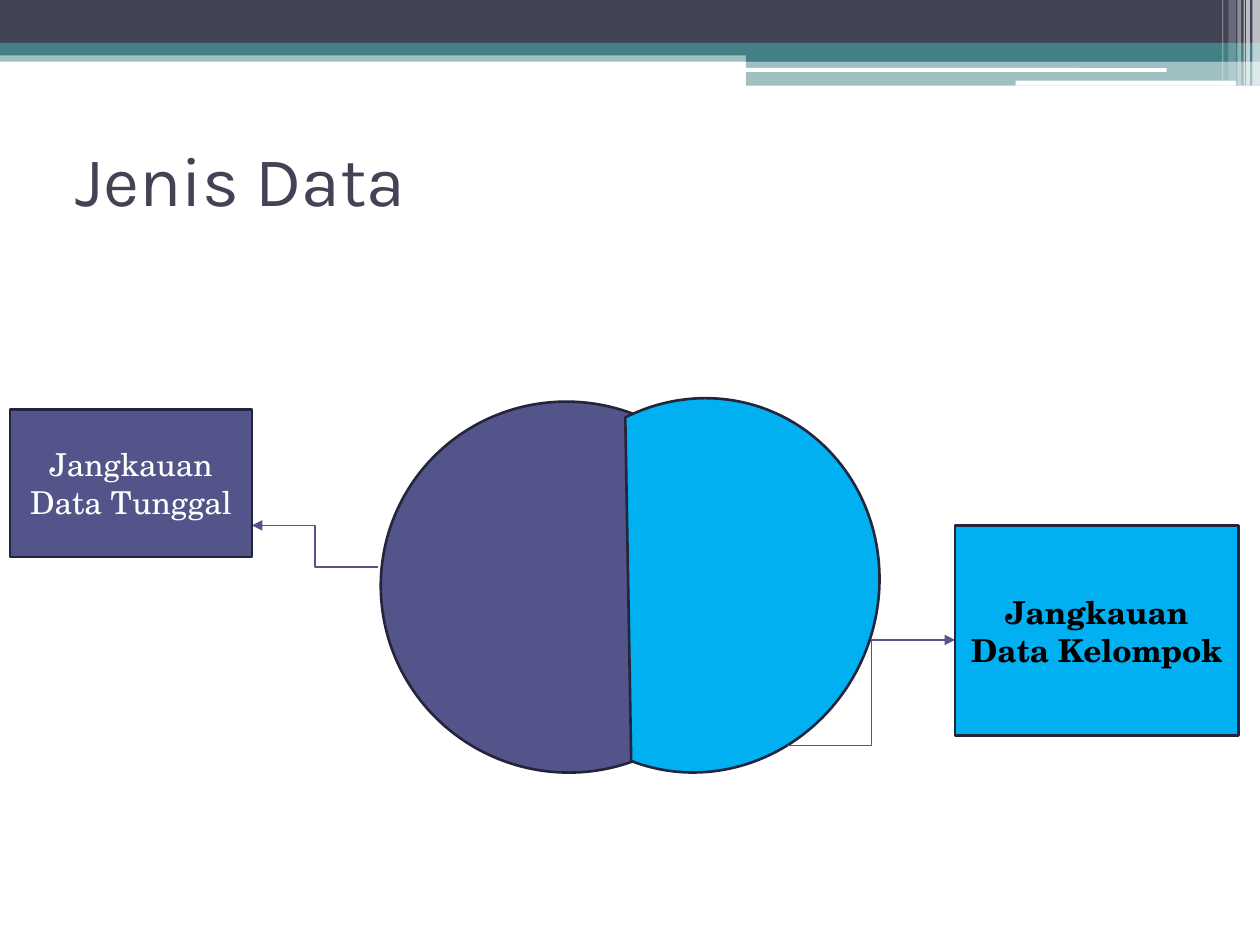
from lxml import etree
from pptx import Presentation
from pptx.dml.color import RGBColor
from pptx.enum.shapes import MSO_CONNECTOR, MSO_SHAPE
from pptx.enum.text import MSO_ANCHOR, PP_ALIGN
from pptx.oxml.ns import qn
from pptx.util import Inches, Pt

RECT, ROUND, CHORD = MSO_SHAPE.RECTANGLE, MSO_SHAPE.ROUNDED_RECTANGLE, MSO_SHAPE.CHORD
ELBOW = MSO_CONNECTOR.ELBOW
MIDDLE = MSO_ANCHOR.MIDDLE
LEFT, CENTER = PP_ALIGN.LEFT, PP_ALIGN.CENTER
HEAD, BODY = "Karla", "TeX Gyre Schola"
COLORS = {
    "slate": "424456",
    "teal": "438086",
    "violet": "53548A",
    "sky": "00B0F0",
    "edge": "24253C",
    "white": "FFFFFF",
    "black": "000000",
}


def tint(name):
    """Return the named colour."""
    return RGBColor.from_string(COLORS[name])


def add_shape(slide, kind, box, fill, alpha=100, edge=None, turn=0):
    """Add a filled preset shape, with an outline if edge is given."""
    shape = slide.shapes.add_shape(kind, *map(Inches, box))
    shape.shadow.inherit = False
    shape.rotation = turn
    shape.fill.solid()
    shape.fill.fore_color.rgb = tint(fill)
    if alpha < 100:
        color = shape.fill._xPr.find(qn("a:solidFill"))[0]
        etree.SubElement(color, qn("a:alpha"), val=str(alpha * 1000))
    if edge:
        shape.line.color.rgb = tint(edge)
        shape.line.width = Pt(1.5)
    else:
        shape.line.fill.background()
    return shape


def add_text(shape, text, font=BODY, size=18, color="white", bold=False, align=CENTER):
    """Write one formatted paragraph into a shape."""
    frame = shape.text_frame
    frame.word_wrap = True
    frame.vertical_anchor = MIDDLE
    para = frame.paragraphs[0]
    para.alignment = align
    run = para.add_run()
    run.text = text
    run.font.name = font
    run.font.size = Pt(size)
    run.font.bold = bold
    run.font.color.rgb = tint(color)


def add_arrow(slide, start, end):
    """Add an elbow connector with an arrowhead at its end."""
    line = slide.shapes.add_connector(ELBOW, *map(Inches, start + end))
    line.line.color.rgb = tint("violet")
    line.line.width = Pt(0.75)
    etree.SubElement(line.line._get_or_add_ln(), qn("a:tailEnd"), type="triangle")
    etree.SubElement(line._element.spPr, qn("a:effectLst"))


def add_banner(slide, left, top, width):
    """Draw the layered bands and the light stripes at the right."""
    right = left + width
    bands = [
        (RECT, 0, 0.4, width, 0.09, "teal", 50),
        (RECT, 0, 0, width, 0.34, "slate", 100),
        (RECT, 0, 0.34, width, 0.1, "teal", 100),
        (RECT, 5.92, 0.39, 4.08, 0.1, "teal", 100),
        (RECT, 5.92, 0.48, 4.08, 0.2, "teal", 50),
        (ROUND, 5.91, 0.54, 3.35, 0.03, "white", 100),
        (ROUND, 8.06, 0.64, 1.75, 0.04, "white", 100),
    ]
    for kind, x, y, wide, high, fill, alpha in bands:
        add_shape(slide, kind, (left + x, top + y, wide, high), fill, alpha)
    stripes = [
        (0.06, 0.06, 0.68, 65),
        (0.11, 0.03, 0.68, 65),
        (0.13, 0.01, 0.68, 60),
        (0.18, 0.03, 0.68, 40),
        (0.25, 0.06, 0.64, 20),
        (0.3, 0.01, 0.64, 30),
    ]
    for inset, wide, high, alpha in stripes:
        add_shape(slide, RECT, (right - inset, top, wide, high), "white", alpha)


def add_title(slide, box, text):
    """Write the slide title."""
    shape = slide.shapes.add_textbox(*map(Inches, box))
    add_text(shape, text, font=HEAD, size=40, color="slate", align=LEFT)


def add_halves(slide, left, top):
    """Draw the two facing chords."""
    halves = [
        ((left, top + 0.04, 2.97, 2.94), "violet", 21.3),
        ((left + 1.11, top, 2.84, 2.99), "sky", 201.2),
    ]
    for box, fill, turn in halves:
        add_shape(slide, CHORD, box, fill, edge="edge", turn=turn)


def add_label(slide, box, text, fill, start, end, **style):
    """Draw a label box and the arrow that leads to it."""
    left, top = box[:2]
    add_arrow(slide, *((left + x, top + y) for x, y in (start, end)))
    add_text(add_shape(slide, RECT, box, fill, edge="edge"), text, **style)


def main():
    """Build and save the slide."""
    deck = Presentation()
    deck.slide_width, deck.slide_height = Inches(10), Inches(7.5)
    slide = deck.slides.add_slide(deck.slide_layouts[6])
    add_banner(slide, 0, 0, 10)
    add_title(slide, (0.5, 0.83, 9, 1.17), "Jenis Data")
    add_halves(slide, 3.02, 3.15)
    add_label(slide, (0.08, 3.25, 1.92, 1.17), "Jangkauan Data Tunggal", "violet",
              (2.92, 1.25), (1.92, 0.92))
    add_label(slide, (7.58, 4.17, 2.25, 1.67), "Jangkauan Data Kelompok", "sky",
              (-1.33, 1.75), (0, 0.91), color="black", bold=True)
    deck.save("out.pptx")


if __name__ == "__main__":
    main()
